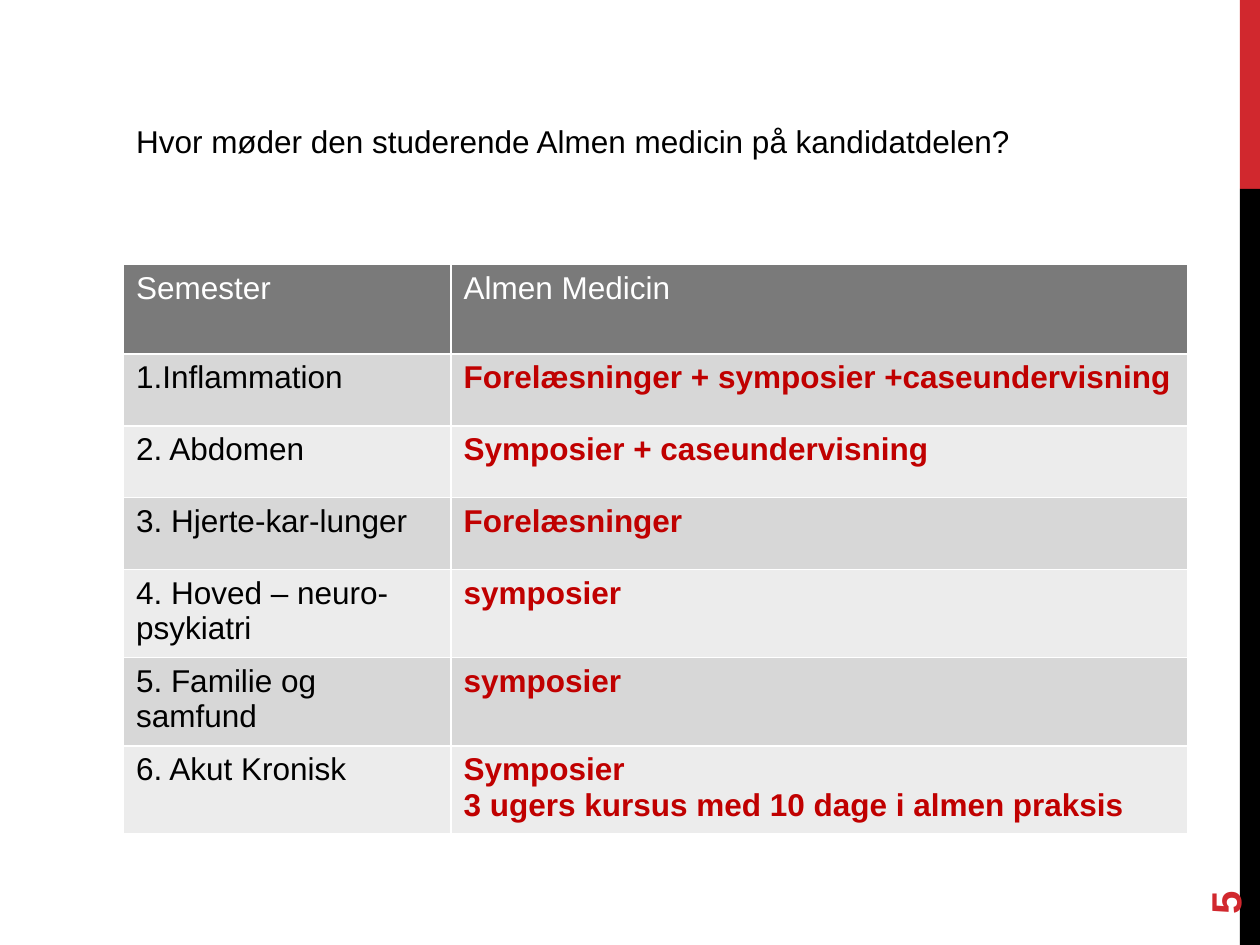
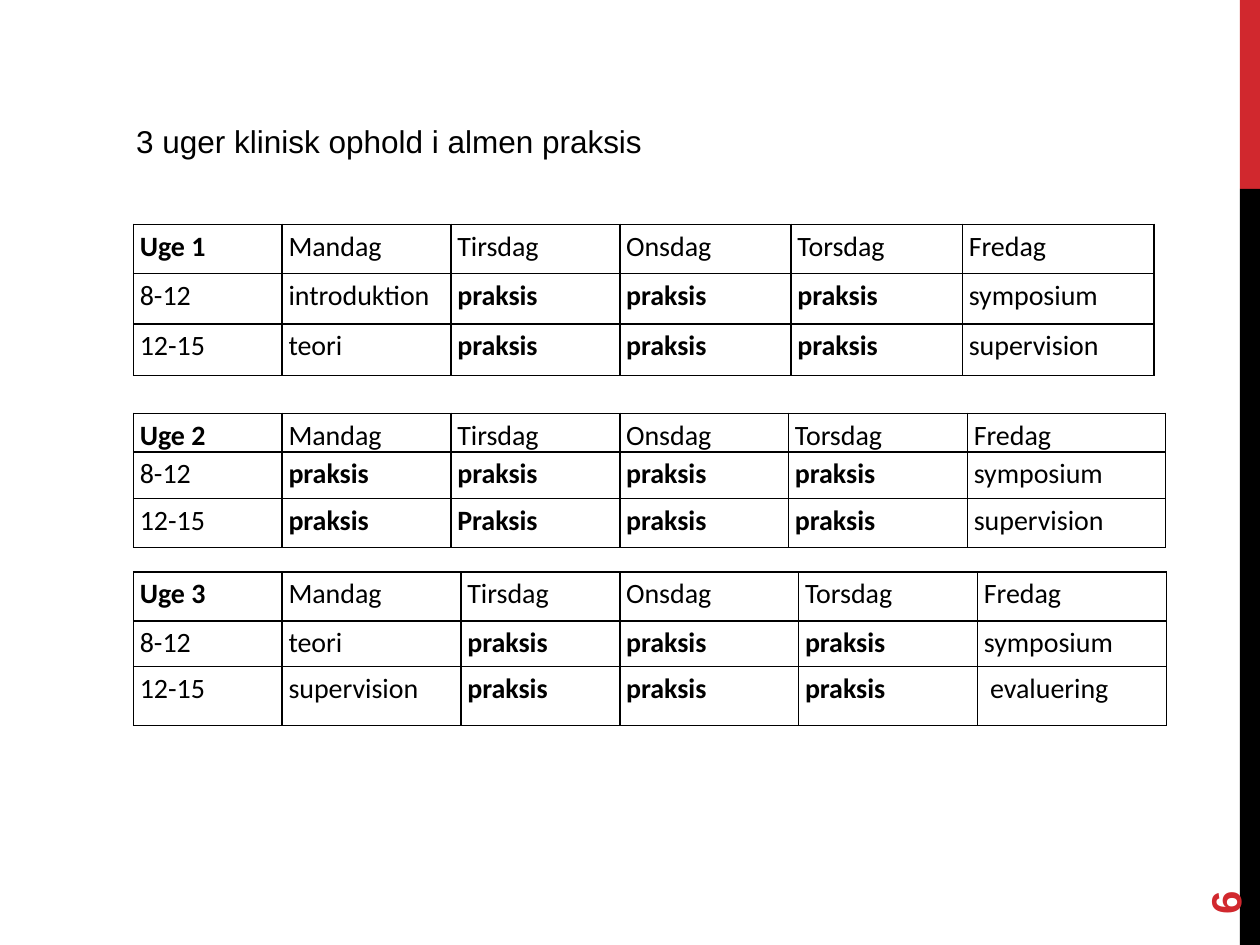
from lxml import etree
from pptx import Presentation
from pptx.dml.color import RGBColor
from pptx.enum.shapes import MSO_SHAPE
from pptx.enum.text import MSO_ANCHOR, PP_ALIGN
from pptx.oxml.ns import qn
from pptx.util import Inches, Pt

RECTANGLE = MSO_SHAPE.RECTANGLE
TOP, MIDDLE = MSO_ANCHOR.TOP, MSO_ANCHOR.MIDDLE
LEFT = PP_ALIGN.LEFT

RED = RGBColor(0xD1, 0x28, 0x2E)
DARK_RED = RGBColor(0xC0, 0x00, 0x00)
BLACK = RGBColor(0x00, 0x00, 0x00)
WHITE = RGBColor(0xFF, 0xFF, 0xFF)
HEADER_GRAY = RGBColor(0x7A, 0x7A, 0x7A)
BAND_GRAYS = [RGBColor(0xEC, 0xEC, 0xEC), RGBColor(0xD7, 0xD7, 0xD7)]

TITLE_LEFT = 0.98
BANDS = [(0, 1.5, RED), (1.5, 6, BLACK)]
CELL_MARGINS = {
    "margin_left": Inches(0.05),
    "margin_right": Inches(0.05),
    "margin_top": 0,
    "margin_bottom": 0,
}

SEMESTERS = [
    ("Semester", "Almen Medicin"),
    ("1.Inflammation", "Forelæsninger + symposier +caseundervisning"),
    ("2. Abdomen", "Symposier + caseundervisning"),
    ("3. Hjerte-kar-lunger", "Forelæsninger"),
    ("4. Hoved – neuro-psykiatri", "symposier"),
    ("5. Familie og samfund", "symposier"),
    ("6. Akut Kronisk", "Symposier\n3 ugers kursus med 10 dage i almen praksis"),
]
DAYS = ["Mandag", "Tirsdag", "Onsdag", "Torsdag", "Fredag"]
WEEKS = [
    (1.78, [1.18, 1.34, 1.34, 1.36, 1.36, 1.52], [0.39, 0.4, 0.41],
     ["introduktion", "praksis", "praksis", "praksis", "symposium"],
     ["teori", "praksis", "praksis", "praksis", "supervision"]),
    (3.28, [1.18, 1.34, 1.34, 1.34, 1.42, 1.57], [0.18, 0.37, 0.39],
     ["praksis", "praksis", "praksis", "praksis", "symposium"],
     ["praksis", "Praksis", "praksis", "praksis", "supervision"]),
    (4.54, [1.18, 1.42, 1.26, 1.42, 1.42, 1.5], [0.39, 0.36, 0.47],
     ["teori", "praksis", "praksis", "praksis", "symposium"],
     ["supervision", "praksis", "praksis", "praksis", " evaluering"]),
]


def write(text_frame, text, font_name, size, color, bold=False, spacing=1.0):
    text_frame.text = text
    for paragraph in text_frame.paragraphs:
        paragraph.alignment = LEFT
        paragraph.line_spacing = spacing
        for run in paragraph.runs:
            run.font.color.rgb = color
            for name, value in {"name": font_name, "size": Pt(size), "bold": bold}.items():
                setattr(run.font, name, value)


def add_bordered_table(slide, left, top, widths, heights, border_color):
    table = slide.shapes.add_table(
        len(heights), len(widths), Inches(left), Inches(top),
        Inches(sum(widths)), Inches(sum(heights))).table
    table.first_row = False
    table.horz_banding = False
    for column, width in zip(table.columns, widths):
        column.width = Inches(width)
    for row, height in zip(table.rows, heights):
        row.height = Inches(height)
    for cell in table.iter_cells():
        properties = cell._tc.get_or_add_tcPr()
        for side in ("a:lnL", "a:lnR", "a:lnT", "a:lnB"):
            line = etree.SubElement(properties, qn(side), w=str(Pt(1)))
            fill = etree.SubElement(line, qn("a:solidFill"))
            etree.SubElement(fill, qn("a:srgbClr"), val=str(border_color))
    return table


presentation = Presentation()
presentation.slide_width = Inches(10)
presentation.slide_height = Inches(7.5)
title_only = presentation.slide_layouts[5]

slides = []
for number, title_text in [
    ("5", "Hvor møder den studerende Almen medicin på kandidatdelen?"),
    ("6", "3 uger klinisk ophold i almen praksis"),
]:
    slide = presentation.slides.add_slide(title_only)
    slides.append(slide)
    for top, height, color in BANDS:
        band = slide.shapes.add_shape(
            RECTANGLE, Inches(9.84), Inches(top), Inches(0.16), Inches(height))
        band.shadow.inherit = False
        band.fill.solid()
        band.fill.fore_color.rgb = color
        band.line.fill.background()

    page_number = slide.shapes.add_textbox(Inches(9), Inches(6.44), Inches(1.44), Inches(0.4))
    page_number.rotation = 270
    page_number.text_frame.word_wrap = True
    page_number.text_frame.vertical_anchor = MIDDLE
    write(page_number.text_frame, number, "Arial", 24, RED, True)

    title = slide.shapes.title
    for name, value in {"left": TITLE_LEFT, "top": 0.92, "width": 8.43, "height": 0.4}.items():
        setattr(title, name, Inches(value))
    title.text_frame.vertical_anchor = TOP
    write(title.text_frame, title_text, "Arial", 18, BLACK)

semester_slide, weeks_slide = slides

table = add_bordered_table(
    semester_slide, TITLE_LEFT, 2.1, [2.6, 5.85], [0.71] + [0.57] * 6, WHITE)
for row_index, texts in enumerate(SEMESTERS):
    is_header = row_index == 0
    for column_index, text in enumerate(texts):
        cell = table.cell(row_index, column_index)
        cell.fill.solid()
        cell.fill.fore_color.rgb = HEADER_GRAY if is_header else BAND_GRAYS[row_index % 2]
        color = WHITE if is_header else (BLACK, DARK_RED)[column_index]
        write(cell.text_frame, text, "Arial", 18, color, not is_header and column_index == 1)

for week, (top, widths, heights, morning, afternoon) in enumerate(WEEKS, 1):
    table = add_bordered_table(weeks_slide, 1.06, top, widths, heights, BLACK)
    texts = [f"Uge {week}", *DAYS, "8-12", *morning, "12-15", *afternoon]
    for cell, text in zip(table.iter_cells(), texts):
        cell.fill.background()
        for name, value in CELL_MARGINS.items():
            setattr(cell, name, value)
        is_bold = text.startswith("Uge") or text.lower() == "praksis"
        write(cell.text_frame, text, "Calibri", 16, BLACK, is_bold, 1.15)

presentation.save("out.pptx")
